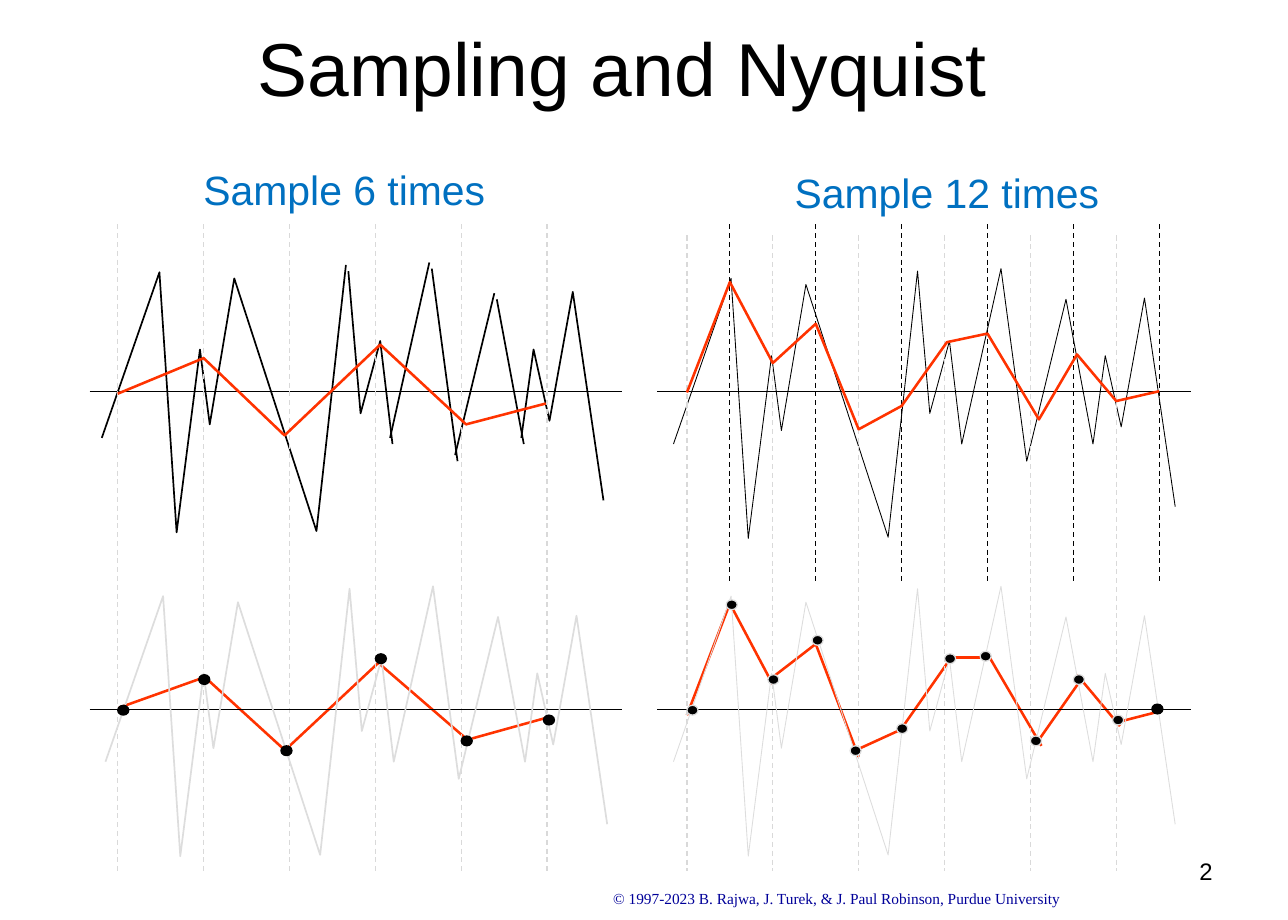
from dataclasses import dataclass
from itertools import pairwise

from lxml.etree import SubElement
from pptx import Presentation
from pptx.dml.color import RGBColor
from pptx.enum.dml import MSO_LINE
from pptx.enum.shapes import MSO_CONNECTOR, MSO_SHAPE
from pptx.enum.text import MSO_ANCHOR, PP_ALIGN
from pptx.oxml.ns import qn
from pptx.util import Pt

PX = 9144  # 100 px to the inch


@dataclass(frozen=True)
class Theme:
    black: str = "000000"
    red: str = "FF3300"
    blue: str = "0070C0"
    navy: str = "000099"
    pale: str = "DDDDDD"
    grid: str = "D9D9D9"
    sans: str = "Arial"
    serif: str = "Times New Roman"
    title: int = 44
    head: int = 24
    page: int = 14
    foot: int = 9
    hair: float = 0.5
    dash: float = 0.75
    thin: float = 1
    bold: float = 1.5


T = Theme()

# The signal, as it stands in the lower right panel
WAVE = [(549, 621), (596, 486), (610, 698), (629, 549), (637, 610),
        (657, 491), (724, 697), (748, 480), (758, 596), (774, 537),
        (784, 621), (816, 478), (837, 635), (869, 503), (891, 621),
        (901, 549), (914, 607), (933, 502), (958, 672)]
# The upper left signal is broken at these points
CUTS = [0, 7, 10, 11, 12, 13, 14, 18]

# Sampled curves in the upper panels
SIX = [(96, 321), (166, 292), (232, 355), (310, 281), (380, 346), (445, 329)]
TWELVE = [(560, 320), (595, 230), (630, 296), (665, 264), (700, 350),
          (735, 331), (772, 279), (805, 272), (847, 342), (878, 289),
          (910, 327), (945, 319)]

# Loose strokes between samples in the lower panels
LEFT = [(97, 577, 167, 552), (167, 552, 236, 615), (233, 611, 311, 538),
        (308, 540, 381, 603), (385, 602, 446, 585)]
RIGHT = [(560, 583, 595, 492), (595, 492, 630, 558), (630, 552, 665, 525),
         (665, 525, 700, 617), (699, 611, 734, 595), (737, 591, 772, 541),
         (771, 536, 806, 536), (805, 533, 849, 608), (847, 603, 882, 553),
         (878, 550, 913, 592), (910, 589, 945, 580)]

# Top left corners of the sample dots
DOTS6 = [(96, 575), (162, 550), (229, 608), (306, 533), (376, 600), (443, 583)]
DOTS12 = [(560, 575), (592, 489), (626, 550), (662, 518), (693, 608),
          (731, 590), (770, 533), (799, 531), (840, 600), (875, 550),
          (907, 583)]


def rgb(color):
    return RGBColor.from_string(color)


def pen(item, color, width):
    item.line.color.rgb = rgb(color)
    item.line.width = Pt(width)


def text(slide, box, words, size, color, font=T.sans, wrap=False):
    frame = slide.shapes.add_textbox(*(n * PX for n in box)).text_frame
    frame.word_wrap = wrap
    para = frame.paragraphs[0]
    para.text = words
    para.font.size = Pt(size)
    para.font.name = font
    para.font.color.rgb = rgb(color)
    return frame


def line(slide, ends, color, width, dash=None):
    item = slide.shapes.add_connector(
        MSO_CONNECTOR.STRAIGHT, *(n * PX for n in ends))
    pen(item, color, width)
    if dash:
        item.line.dash_style = dash
    SubElement(item._element.spPr, qn("a:effectLst"))


def curve(slide, points, color, width):
    build = slide.shapes.build_freeform(*points[0], scale=PX)
    build.add_line_segments(points[1:], close=False)
    item = build.convert_to_shape()
    item.shadow.inherit = False
    item.fill.background()
    pen(item, color, width)


def wave(slide, points, dx, dy, color, width):
    curve(slide, [(x + dx, y + dy) for x, y in points], color, width)


def grid(slide, left, top, foot, color):
    for i in range(6):
        x = left + 70 * i
        line(slide, (x, top, x, foot), color, T.dash, MSO_LINE.DASH)


def dot(slide, spot, edge):
    x, y = spot
    item = slide.shapes.add_shape(
        MSO_SHAPE.OVAL, x * PX, y * PX, 9 * PX, 8 * PX)
    item.shadow.inherit = False
    item.fill.solid()
    item.fill.fore_color.rgb = rgb(T.black)
    pen(item, edge, T.dash)


def axes(slide, y):
    for left, right in ((73, 507), (536, 971)):
        line(slide, (left, y, right, y), T.black, T.hair)


def main():
    deck = Presentation()
    deck.slide_width, deck.slide_height = 1050 * PX, 750 * PX
    slide = deck.slides.add_slide(deck.slide_layouts[6])

    # Footer and title
    text(slide, (490, 720, 516, 25),
         "© 1997-2023 B. Rajwa, J. Turek, & J. Paul Robinson, Purdue University",
         T.foot, T.navy, T.serif, True)
    title = text(slide, (35, 0, 945, 108), "Sampling and Nyquist",
                 T.title, T.black, wrap=True)
    title.vertical_anchor = MSO_ANCHOR.MIDDLE
    title.paragraphs[0].alignment = PP_ALIGN.CENTER

    # Lower sampled strokes, behind the signals
    for ends in RIGHT + LEFT:
        line(slide, ends, T.red, T.bold)

    # Upper signals
    axes(slide, 319)
    for i, (a, b) in enumerate(pairwise(CUTS)):
        dx, dy = ((-466, -264), (-464, -259))[i % 2]
        wave(slide, WAVE[a:b + 1], dx, dy, T.black, T.thin)
    wave(slide, WAVE, 0, -259, T.black, T.hair)

    # Sampling times
    grid(slide, 96, 183, 710, T.grid)
    grid(slide, 560, 192, 710, T.grid)
    grid(slide, 595, 183, 475, T.black)

    # Lower signals and sample dots
    axes(slide, 578)
    wave(slide, WAVE, -463, 0, T.pale, T.thin)
    for spot in DOTS6:
        dot(slide, spot, T.black)
    wave(slide, WAVE, 0, 0, T.pale, T.hair)
    for spot in DOTS12:
        dot(slide, spot, T.pale)
    dot(slide, (939, 574), T.black)

    # Upper sampled curves
    for points in (SIX, TWELVE):
        curve(slide, points, T.red, T.bold)

    # Page number and headings
    page = text(slide, (968, 696, 31, 31), "2", T.page, T.black)
    page.paragraphs[0].line_spacing = 0.9
    text(slide, (156, 129, 252, 50), "Sample 6 times", T.head, T.blue)
    text(slide, (638, 132, 271, 50), "Sample 12 times", T.head, T.blue)

    deck.save("out.pptx")


if __name__ == "__main__":
    main()
